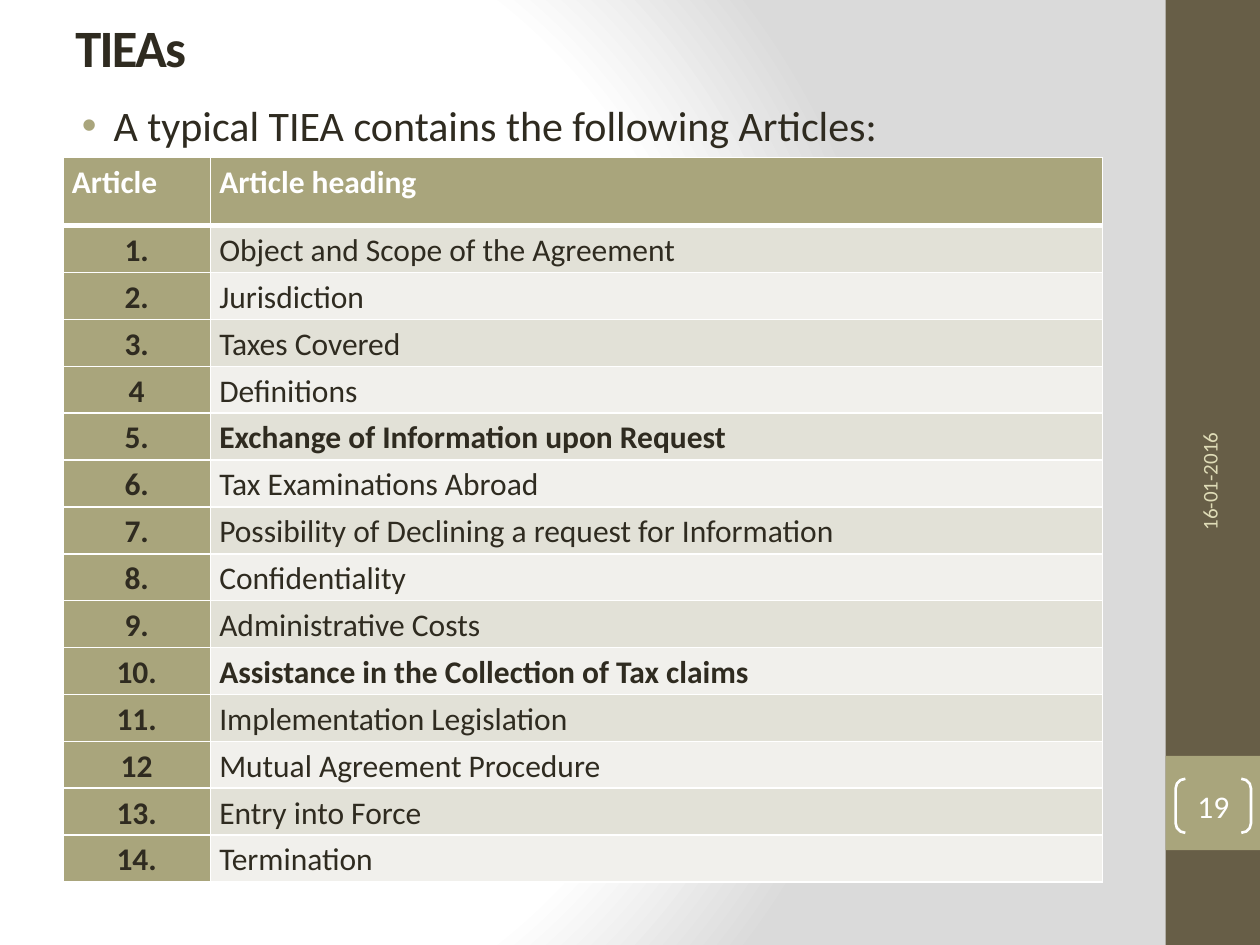
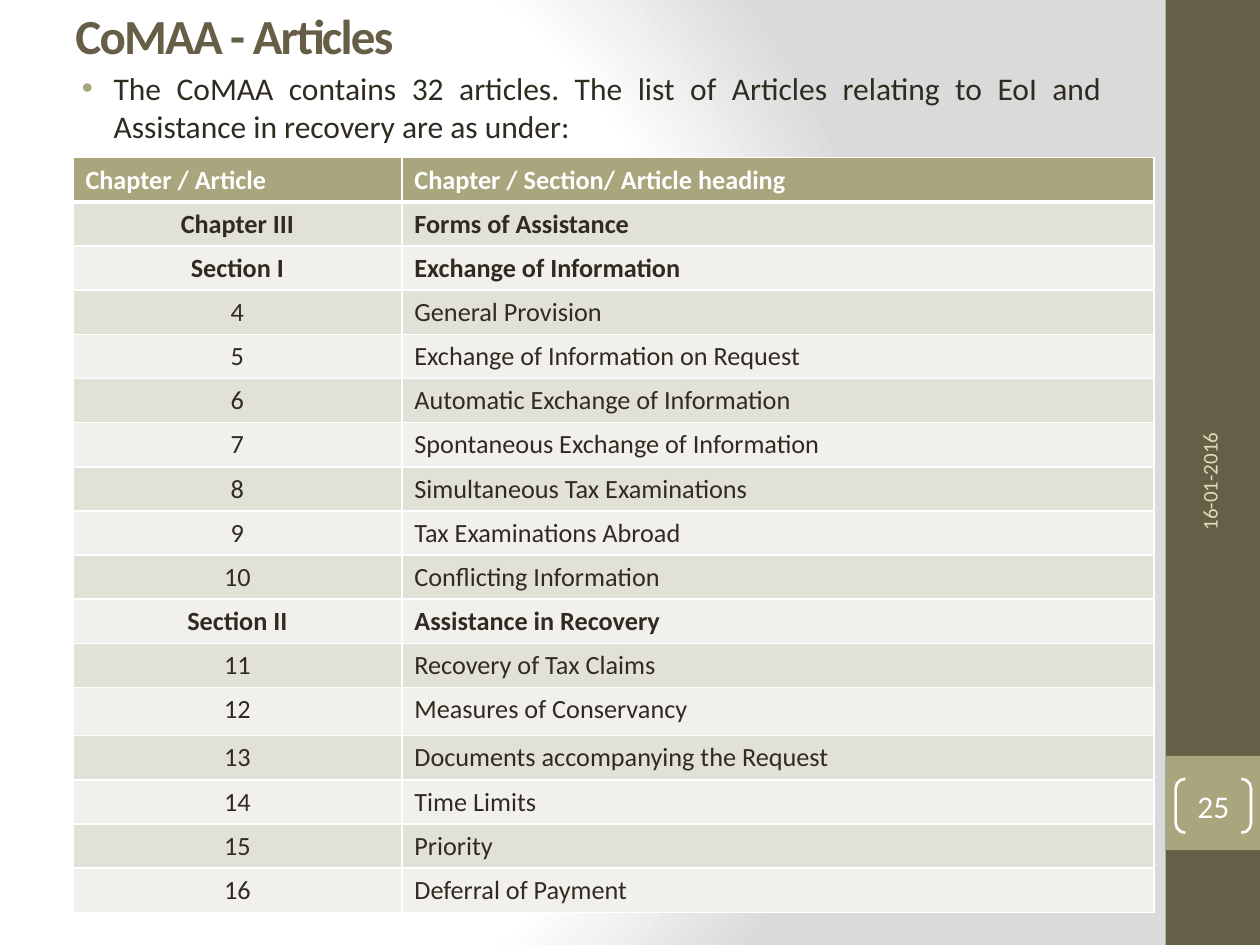
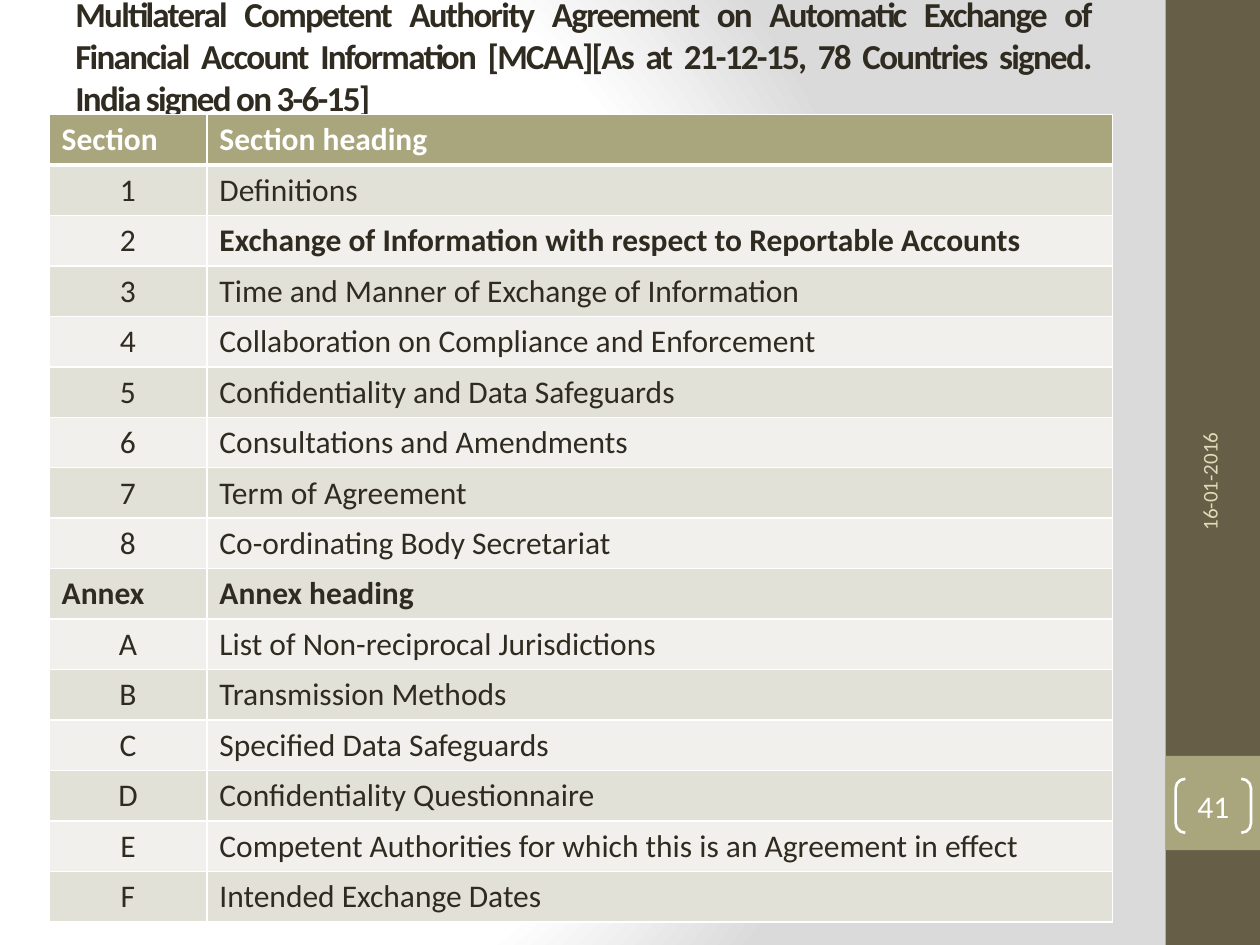
from dataclasses import dataclass, field

from lxml.etree import SubElement
from pptx import Presentation
from pptx.dml.color import RGBColor
from pptx.enum.shapes import MSO_SHAPE
from pptx.enum.text import MSO_ANCHOR, PP_ALIGN
from pptx.oxml import parse_xml
from pptx.oxml.ns import nsdecls, qn
from pptx.util import Cm, Pt


@dataclass(frozen=True)
class Theme:
    """Colours, font and type sizes of the deck."""
    font: str = "Calibri"
    ink: str = "2F2B20"
    brown: str = "675E47"
    olive: str = "A9A57C"
    sand: str = "DFDCB7"
    white: str = "FFFFFF"
    grey: str = "DADADA"
    odd: str = "E2E1D7"
    even: str = "F1F0EC"
    page: int = 18
    date: int = 12
    thin: float = 1
    thick: float = 3


@dataclass
class Grid:
    """Content and look of one two-column table."""
    rows: list
    cols: tuple
    size: int
    fixed: dict = field(default_factory=dict)
    bold: tuple = ()
    flush: tuple = ()
    stub: bool = False
    tight: bool = False


THEME = Theme()
WIDE, HIGH = 25.4, 19.05
BAND = (23.5, 0, 1.9, HIGH)
DATE = "16-01-2016"

TIEA = Grid(
    rows=[
        ("Article", "Article heading"),
        ("1.", "Object and Scope of the Agreement"),
        ("2.", "Jurisdiction"),
        ("3.", "Taxes Covered"),
        ("4", "Definitions"),
        ("5.", "Exchange of Information upon Request"),
        ("6.", "Tax Examinations Abroad"),
        ("7.", "Possibility of Declining a request for Information"),
        ("8.", "Confidentiality"),
        ("9.", "Administrative Costs"),
        ("10.", "Assistance in the Collection of Tax claims"),
        ("11.", "Implementation Legislation"),
        ("12", "Mutual Agreement Procedure"),
        ("13.", "Entry into Force"),
        ("14.", "Termination"),
    ],
    cols=(2.97, 17.98), size=18, fixed={0: 1.37}, bold=("5.", "10."),
    stub=True, tight=True)

COMAA = Grid(
    rows=[
        ("Chapter / Article", "Chapter / Section/ Article heading"),
        ("Chapter III", "Forms of Assistance"),
        ("Section I", "Exchange of Information"),
        ("4", "General Provision"),
        ("5", "Exchange of Information on Request"),
        ("6", "Automatic Exchange of Information"),
        ("7", "Spontaneous Exchange of Information"),
        ("8", "Simultaneous Tax Examinations"),
        ("9", "Tax Examinations Abroad"),
        ("10", "Conflicting Information"),
        ("Section II", "Assistance in Recovery"),
        ("11", "Recovery of Tax Claims"),
        ("12", "Measures of Conservancy"),
        ("13", "Documents accompanying the Request"),
        ("14", "Time Limits"),
        ("15", "Priority"),
        ("16", "Deferral of Payment"),
    ],
    cols=(6.63, 15.16), size=15, fixed={12: 0.97})

MCAA = Grid(
    rows=[
        ("Section", "Section heading"),
        ("1", "Definitions"),
        ("2", "Exchange of Information with respect to Reportable Accounts"),
        ("3", "Time and Manner of Exchange of Information"),
        ("4", "Collaboration on Compliance and Enforcement"),
        ("5", "Confidentiality and Data Safeguards"),
        ("6", "Consultations and Amendments"),
        ("7", "Term of Agreement"),
        ("8", "Co-ordinating Body Secretariat"),
        ("Annex", "Annex heading"),
        ("A", "List of Non-reciprocal Jurisdictions"),
        ("B", "Transmission Methods"),
        ("C", "Specified Data Safeguards"),
        ("D", "Confidentiality Questionnaire"),
        ("E", "Competent Authorities for which this is an Agreement in effect"),
        ("F", "Intended Exchange Dates"),
    ],
    cols=(3.18, 18.26), size=18, bold=("2",), flush=("Annex",))


def lengths(box):
    """Turn a box in centimetres into lengths."""
    return [Cm(side) for side in box]


def write(frame, text, size, hue, bold=False, align=PP_ALIGN.LEFT):
    """Put one styled paragraph into a frame and return it."""
    para = frame.paragraphs[0]
    para.text = text
    para.alignment = align
    font = para.runs[0].font
    font.name, font.size, font.bold = THEME.font, Pt(size), bold
    font.color.rgb = RGBColor.from_string(hue)
    return para


def add_box(slide, box, anchor=MSO_ANCHOR.TOP):
    """Add a wrapping text box."""
    shape = slide.shapes.add_textbox(*lengths(box))
    shape.text_frame.word_wrap = True
    shape.text_frame.vertical_anchor = anchor
    return shape


def add_block(slide, box, hue):
    """Add a plain filled rectangle."""
    block = slide.shapes.add_shape(MSO_SHAPE.RECTANGLE, *lengths(box))
    block.shadow.inherit = False
    block.fill.solid()
    block.fill.fore_color.rgb = RGBColor.from_string(hue)
    block.line.fill.background()


def add_badge(slide, box, page):
    """Add the square with the bracketed page number."""
    left, top, _, _ = box
    add_block(slide, box, THEME.olive)
    mark = slide.shapes.add_shape(
        MSO_SHAPE.DOUBLE_BRACKET,
        *lengths((left + 0.2, top + 0.46, 1.52, 1.09)))
    mark.adjustments[0] = 0.18
    mark.shadow.inherit = False
    mark.fill.background()
    mark.line.color.rgb = RGBColor.from_string(THEME.white)
    mark.line.width = Pt(1.5)
    frame = mark.text_frame
    frame.margin_left = frame.margin_right = 0
    frame.margin_top = frame.margin_bottom = 0
    frame.vertical_anchor = MSO_ANCHOR.MIDDLE
    write(frame, str(page), THEME.page, THEME.white, align=PP_ALIGN.CENTER)


def add_band(slide, box, page):
    """Add the side band with its date and page number."""
    left, top, width, _ = box
    add_block(slide, box, THEME.brown)
    add_badge(slide, (left, top + 15.24, width, width), page)
    date = add_box(slide, (left - 2.41, top + 11.25, 6.58, 1.02),
                   MSO_ANCHOR.MIDDLE)
    date.rotation = 270
    write(date.text_frame, DATE, THEME.date, THEME.sand,
          align=PP_ALIGN.RIGHT)


def add_title(slide, box, text, size, hue=THEME.ink, align=PP_ALIGN.LEFT):
    """Add a bold title with tight letter spacing."""
    frame = add_box(slide, box, MSO_ANCHOR.MIDDLE).text_frame
    para = write(frame, text, size, hue, True, align)
    para.runs[0].font._element.set("spc", "-100")


def add_lead(slide, box, text, size):
    """Add the bulleted line above a table."""
    frame = add_box(slide, box).text_frame
    para = write(frame, text, size, THEME.ink, align=PP_ALIGN.JUSTIFY)
    para.space_before = Pt(6)
    props = para._p.get_or_add_pPr()
    props.set("marL", str(Cm(0.97)))
    props.set("indent", str(Cm(-0.64)))
    tint = SubElement(props, qn("a:buClr"))
    SubElement(tint, qn("a:srgbClr"), val=THEME.olive)
    SubElement(props, qn("a:buFont"), typeface="Arial")
    SubElement(props, qn("a:buChar"), char="•")


def add_rules(cell, row):
    """Draw white cell borders, thick below the header."""
    props = cell._tc.get_or_add_tcPr()
    heavy = {0: "B", 1: "T"}.get(row)
    for side in "LRTB":
        width = THEME.thick if side == heavy else THEME.thin
        line = SubElement(props, qn(f"a:ln{side}"), w=str(Pt(width)))
        fill = SubElement(line, qn("a:solidFill"))
        SubElement(fill, qn("a:srgbClr"), val=THEME.white)


def fill_cell(cell, grid, row, col):
    """Style one cell by its place in the grid."""
    label = grid.rows[row][0]
    head, first = row == 0, col == 0
    group = len(label) > 3
    stub = grid.stub and first
    bold = head or group or stub or (not first and label in grid.bold)
    if first and not head and label not in grid.flush:
        align = PP_ALIGN.CENTER
    else:
        align = PP_ALIGN.JUSTIFY if grid.tight else PP_ALIGN.LEFT
    add_rules(cell, row)
    shade = THEME.odd if row % 2 else THEME.even
    cell.fill.solid()
    cell.fill.fore_color.rgb = RGBColor.from_string(
        THEME.olive if head or stub else shade)
    para = write(cell.text_frame, grid.rows[row][col], grid.size,
                 THEME.white if head else THEME.ink, bold, align)
    if grid.tight:
        cell.margin_left = cell.margin_right = Cm(0.18)
        cell.margin_top = cell.margin_bottom = 0
        para.line_spacing = 1.15
        para.space_after = Pt(4)


def add_grid(slide, spot, height, grid):
    """Add a table whose free rows share the height left."""
    count = len(grid.rows)
    box = (*spot, sum(grid.cols), height)
    table = slide.shapes.add_table(count, 2, *lengths(box)).table
    table.first_row = table.horz_banding = False
    for col, width in enumerate(grid.cols):
        table.columns[col].width = Cm(width)
    share = (height - sum(grid.fixed.values())) / (count - len(grid.fixed))
    for row in range(count):
        table.rows[row].height = Cm(grid.fixed.get(row, share))
        for col in range(2):
            fill_cell(table.cell(row, col), grid, row, col)


def paint(master):
    """Give the master its round white to grey fade."""
    master.background.fill.solid()
    back = master.element.find(".//" + qn("p:bgPr"))
    stops = ((0, THEME.white), (75, THEME.white), (100, THEME.grey))
    marks = "".join(
        f'<a:gs pos="{at * 1000}"><a:srgbClr val="{hue}"/></a:gs>'
        for at, hue in stops)
    fade = parse_xml(
        f'<a:gradFill {nsdecls("a")} rotWithShape="1">'
        f'<a:gsLst>{marks}</a:gsLst><a:path path="circle">'
        '<a:fillToRect l="20000" t="50000" r="100000" b="50000"/>'
        '</a:path></a:gradFill>')
    back.replace(back[0], fade)


def add_page(deck, page):
    """Add a blank slide with the side band."""
    slide = deck.slides.add_slide(deck.slide_layouts[6])
    add_band(slide, BAND, page)
    return slide


def main():
    """Build and save the deck."""
    deck = Presentation()
    deck.slide_width, deck.slide_height = Cm(WIDE), Cm(HIGH)
    paint(deck.slide_master)

    slide = add_page(deck, 19)
    add_title(slide, (1.27, 0, 21.16, 1.88), "TIEAs", 30)
    add_lead(slide, (1.07, 1.88, 21.39, 14.86),
             "A typical TIEA contains the following Articles:", 24)
    add_grid(slide, (1.27, 3.18), 14.6, TIEA)

    slide = add_page(deck, 25)
    add_title(slide, (1.27, 0.13, 21.16, 1.14), "CoMAA - Articles", 28,
              THEME.brown)
    add_lead(slide, (1.07, 1.27, 21.39, 15.44),
             "The CoMAA contains 32 articles. The list of Articles relating "
             "to EoI and Assistance in recovery are as under:", 18)
    add_grid(slide, (1.47, 3.18), 15.19, COMAA)

    slide = add_page(deck, 41)
    add_title(slide, (1.27, 0.13, 20.96, 1.98),
              "Multilateral Competent Authority Agreement on Automatic "
              "Exchange of Financial Account Information [MCAA][As at "
              "21-12-15, 78 Countries signed. India signed on 3-6-15]", 20,
              align=PP_ALIGN.JUSTIFY)
    add_grid(slide, (0.99, 2.31), 16.26, MCAA)

    deck.save("out.pptx")


if __name__ == "__main__":
    main()
